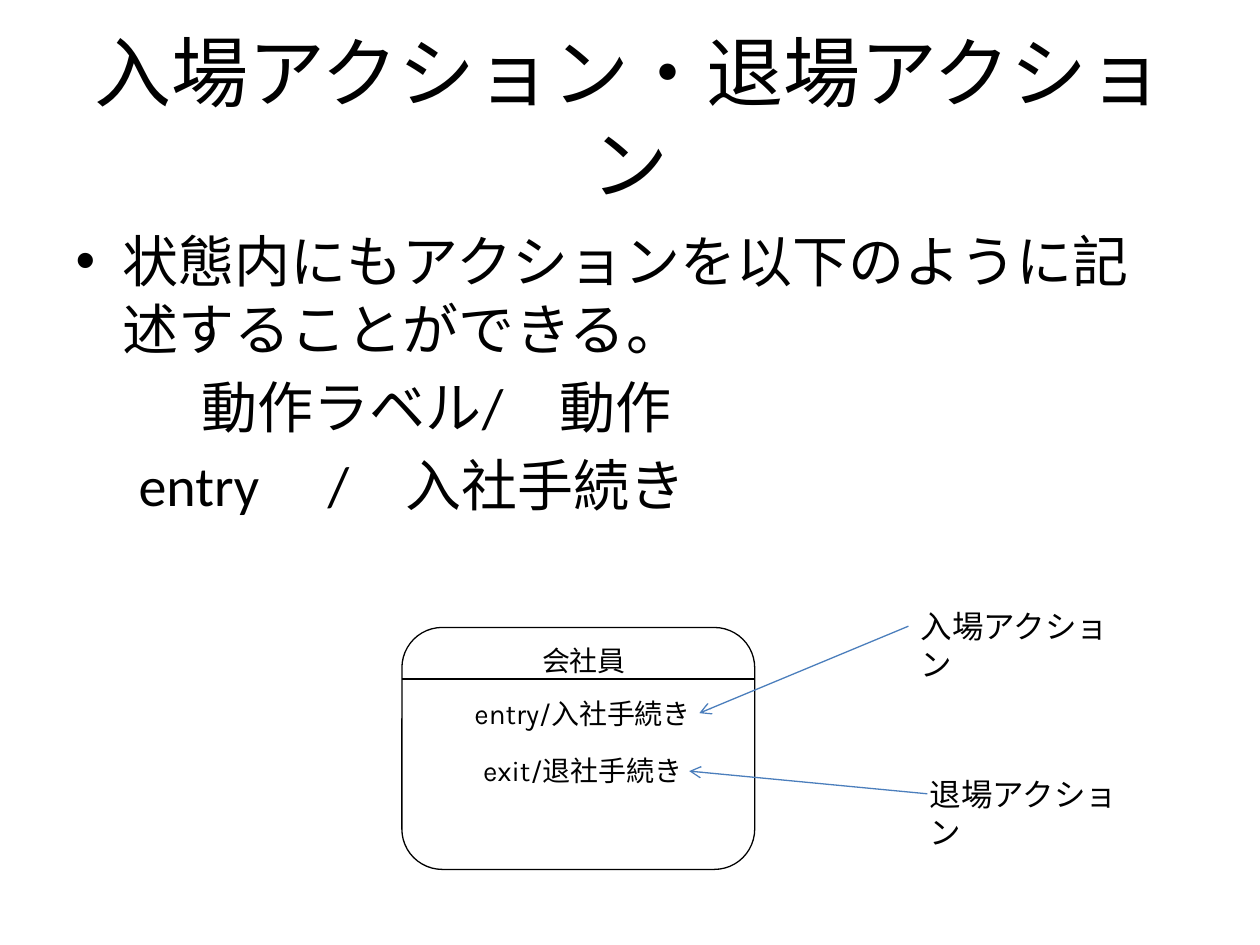
from dataclasses import dataclass

from lxml.etree import SubElement
from pptx import Presentation
from pptx.dml.color import RGBColor
from pptx.enum.shapes import MSO_CONNECTOR as CONN, MSO_SHAPE as SHAPE
from pptx.enum.text import MSO_ANCHOR as ANCHOR, MSO_AUTO_SIZE as AUTO, PP_ALIGN as ALIGN
from pptx.oxml.ns import qn
from pptx.util import Inches, Pt


@dataclass(frozen=True)
class Theme:
    ink: RGBColor = RGBColor(0x00, 0x00, 0x00)
    arrow: RGBColor = RGBColor(0x4B, 0x7E, 0xBC)
    font: str = "Calibri"
    state_font: str = "Karla"
    title: int = 44
    body: int = 32
    tab: int = 28
    label: int = 18
    state: int = 16
    line: float = 0.75


THEME = Theme()


def add_run(p, text, size, font=THEME.font):
    r = p.add_run()
    r.text = text
    r.font.size = Pt(size)
    r.font.name = font
    r.font.color.rgb = THEME.ink


def place(sp, left, top, width, height):
    sp.left, sp.top = Inches(left), Inches(top)
    sp.width, sp.height = Inches(width), Inches(height)


def plain_indent(p, left):
    """Remove the bullet and hanging indent, leaving a left margin."""
    pPr = p._p.get_or_add_pPr()
    pPr.set("marL", str(Inches(left)))
    pPr.set("indent", "0")
    SubElement(pPr, qn("a:buNone"))


def add_title(s, text):
    sp = s.shapes.title
    place(sp, 0.5, 0.3, 9, 1.25)
    tf = sp.text_frame
    tf.auto_size = AUTO.NONE
    tf.vertical_anchor = ANCHOR.MIDDLE
    p = tf.paragraphs[0]
    p.alignment = ALIGN.CENTER
    add_run(p, text, THEME.title)


def add_body(s):
    sp = s.placeholders[1]
    place(sp, 0.5, 1.75, 9, 4.95)
    tf = sp.text_frame
    tf.auto_size = AUTO.NONE
    add_run(tf.paragraphs[0], "状態内にもアクションを以下のように記述することができる。", THEME.body)

    p = tf.add_paragraph()
    p.level = 1
    plain_indent(p, 0.5)
    add_run(p, "\t", THEME.tab)
    add_run(p, "動作ラベル/　動作", THEME.body)

    p = tf.add_paragraph()
    plain_indent(p, 0)
    add_run(p, "\tentry\t\t/　入社手続き", THEME.body)


def add_text(s, text, box, size, font, align):
    sp = s.shapes.add_textbox(*map(Inches, box))
    tf = sp.text_frame
    tf.word_wrap = True
    tf.auto_size = AUTO.NONE
    p = tf.paragraphs[0]
    p.alignment = align
    add_run(p, text, size, font)
    return sp


def add_state_text(s, text, left, top, width):
    add_text(s, text, (left, top, width, 0.37), THEME.state, THEME.state_font, ALIGN.CENTER)


def add_label(s, text, left, top):
    return add_text(s, text, (left, top, 1.74, 0.4), THEME.label, THEME.font, ALIGN.LEFT)


def add_line(s, start, end, color):
    line = s.shapes.add_connector(CONN.STRAIGHT, *map(Inches, start + end))
    line.line.color.rgb = color
    line.line.width = Pt(THEME.line)
    SubElement(line._element.spPr, qn("a:effectLst"))
    return line


def add_arrow(s, start, end):
    arrow = add_line(s, start, end, THEME.arrow)
    SubElement(arrow.line._get_or_add_ln(), qn("a:tailEnd"), type="arrow")
    return arrow


def add_state(s, name, actions):
    """Draw a state box with its name above a divider and its actions below."""
    left, top, width, height = 3.19, 4.98, 2.8, 1.92
    sp = s.shapes.add_shape(SHAPE.FLOWCHART_ALTERNATE_PROCESS,
                            *map(Inches, (left, top, width, height)))
    sp.shadow.inherit = False
    sp.fill.background()
    sp.line.color.rgb = THEME.ink
    sp.line.width = Pt(THEME.line)

    divider = top + 0.41
    add_line(s, (left, divider), (left + width, divider), THEME.ink)
    add_state_text(s, name, 4.01, top + 0.08, 1.25)
    for i, action in enumerate(actions):
        add_state_text(s, action, 3.46, top + 0.5 + 0.45 * i, 2.33)


def main():
    prs = Presentation()
    prs.slide_width, prs.slide_height = Inches(10), Inches(7.5)
    s = prs.slides.add_slide(prs.slide_layouts[1])
    add_title(s, "入場アクション・退場アクション")
    add_body(s)
    add_state(s, "会社員", ["entry/入社手続き", "exit/退社手続き"])

    entry_label = add_label(s, "入場アクション", 7.21, 4.77)
    entry_arrow = add_arrow(s, (7.2, 4.98), (5.55, 5.66))
    entry_arrow.begin_connect(entry_label, 1)
    add_arrow(s, (7.36, 6.3), (5.47, 6.12))
    add_label(s, "退場アクション", 7.28, 6.1)
    prs.save("out.pptx")


if __name__ == "__main__":
    main()
